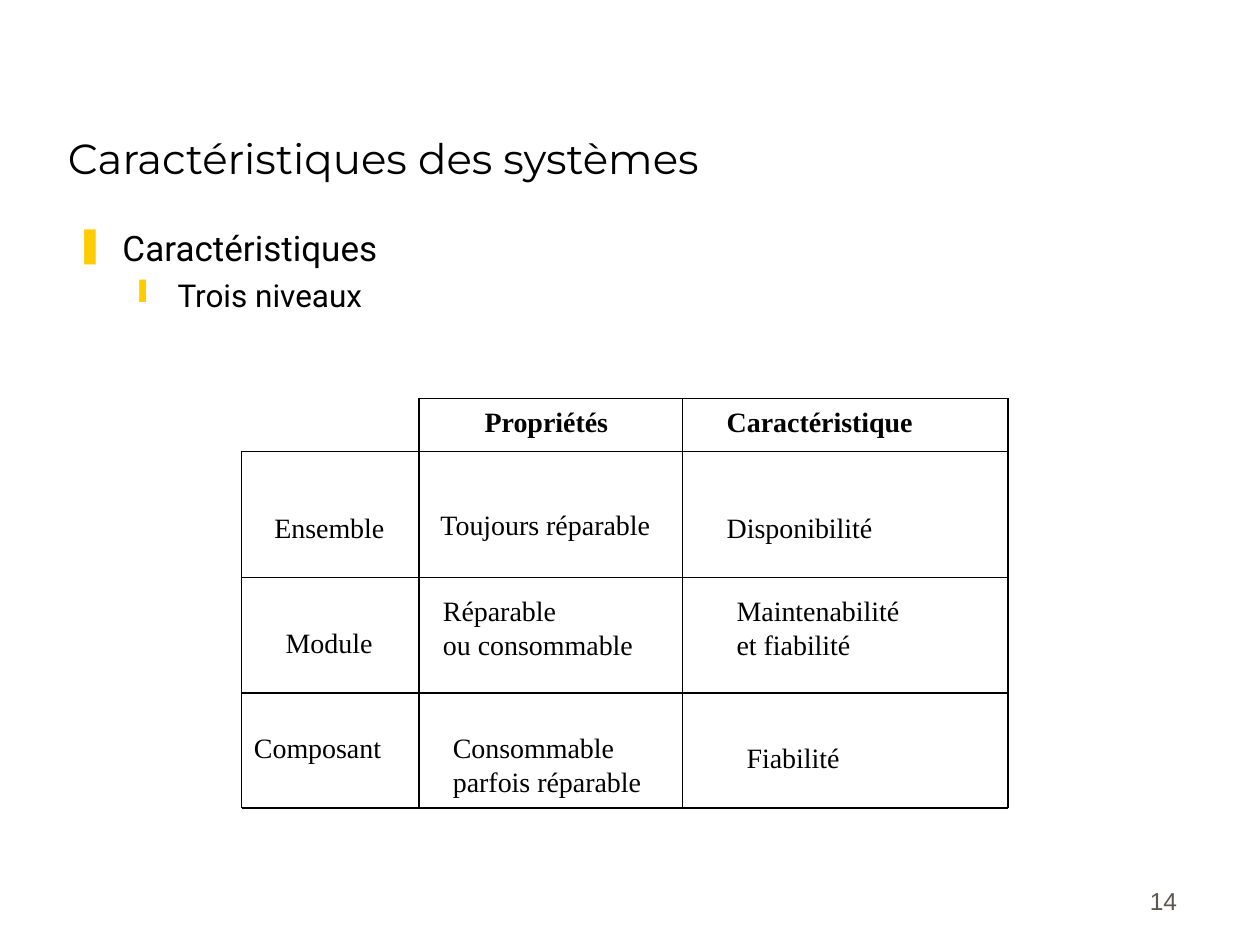
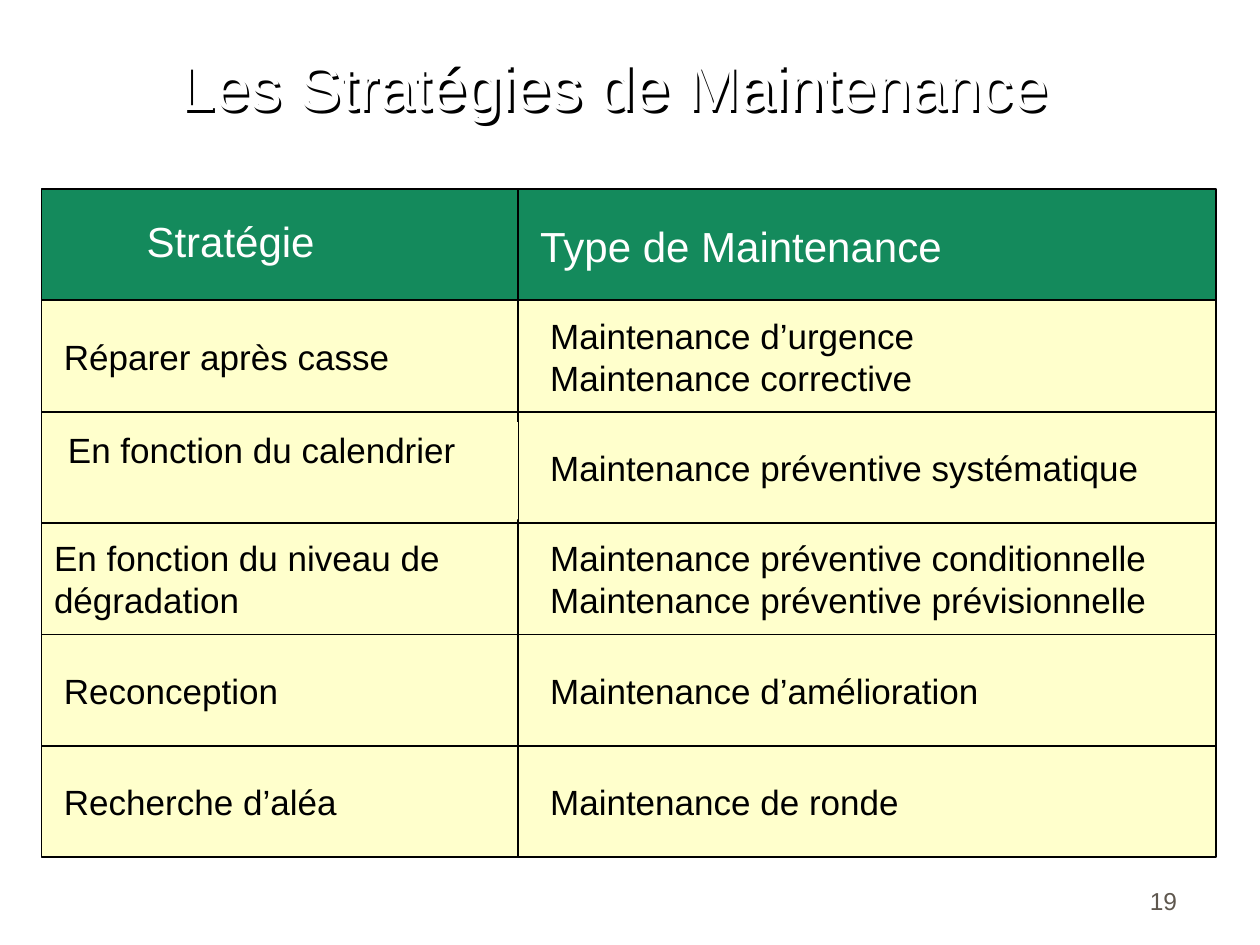
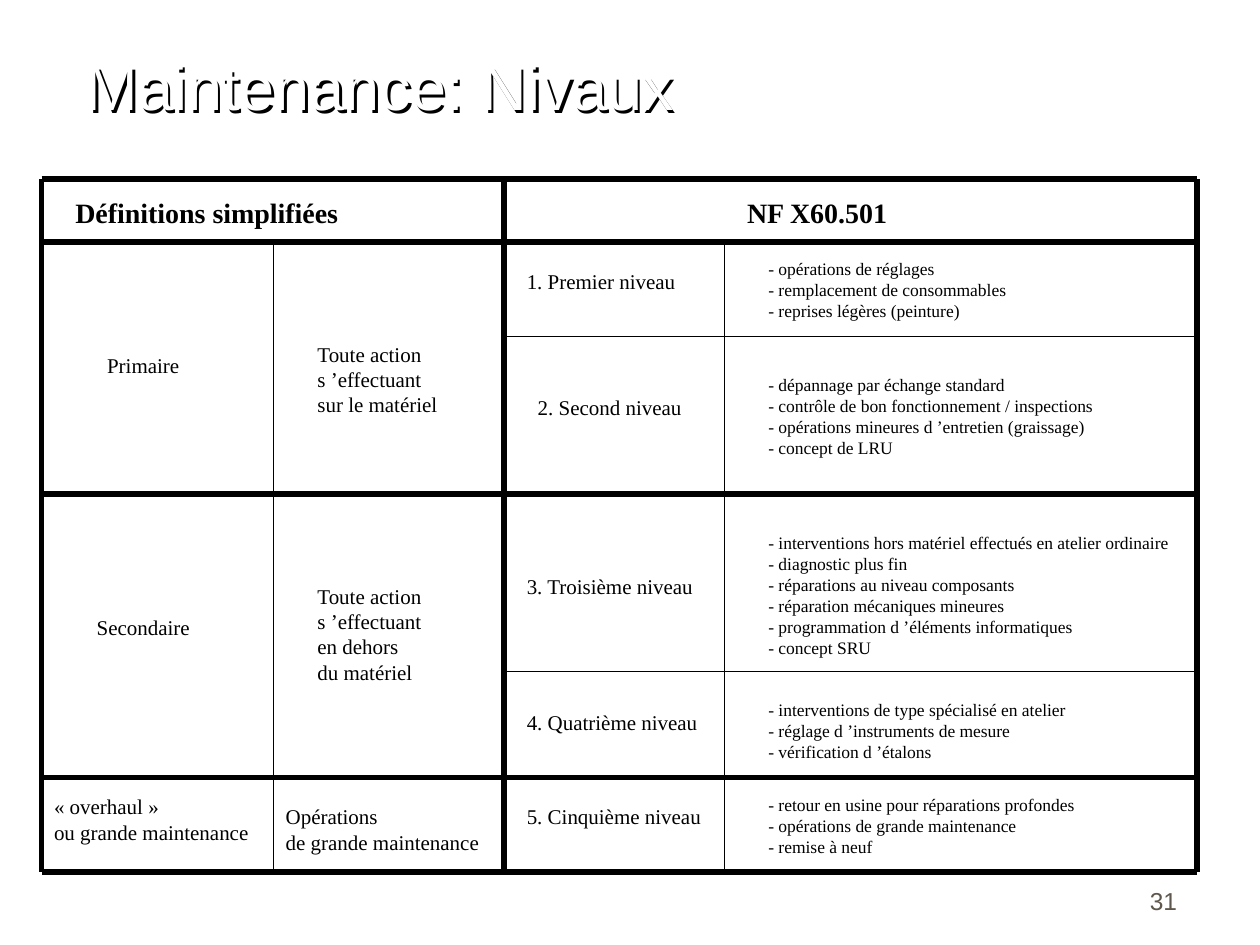
import dataclasses

import lxml.etree
import pptx
import pptx.dml.color
import pptx.enum.shapes
import pptx.enum.text
import pptx.oxml.ns
import pptx.util

Cm = pptx.util.Cm
Pt = pptx.util.Pt
ALIGN = pptx.enum.text.PP_ALIGN
ANCHOR = pptx.enum.text.MSO_ANCHOR


@dataclasses.dataclass(frozen=True)
class Theme:
    """Colours, fonts and type sizes of the deck."""
    ink: str = "000000"
    white: str = "FFFFFF"
    green: str = "148A5C"
    cream: str = "FFFFCC"
    gold: str = "FFCC00"
    grey: str = "5E574E"
    sans: str = "Arial"
    serif: str = "Times New Roman"
    head: str = "Montserrat"
    body: str = "Roboto"
    banner: int = 36
    title: int = 24
    large: int = 20
    sub: int = 18
    mid: int = 16
    foot: int = 14
    small: int = 12
    tiny: int = 10
    thin: float = 0.75
    edge: float = 1
    thick: float = 3


@dataclasses.dataclass(frozen=True)
class Box:
    """A region in centimetres."""
    x: float
    y: float
    w: float
    h: float

    def inner(self, x, y, w, h):
        """Return a box placed relative to this one."""
        return Box(self.x + x, self.y + y, w, h)

    def place(self):
        """Return left, top, width and height as lengths."""
        return Cm(self.x), Cm(self.y), Cm(self.w), Cm(self.h)


T = Theme()


def paint(tone):
    """Return the colour for a hex code."""
    return pptx.dml.color.RGBColor.from_string(tone)


def add(parent, tag, **attrs):
    """Append a drawing element to its parent."""
    return lxml.etree.SubElement(parent, pptx.oxml.ns.qn(tag), **attrs)


def fill_text(shape, text, size, font, tone=T.ink, bold=False,
              align=ALIGN.LEFT, anchor=ANCHOR.TOP):
    """Write text in a shape and format its runs."""
    frame = shape.text_frame
    frame.word_wrap = True
    frame.vertical_anchor = anchor
    frame.text = text
    for para in frame.paragraphs:
        para.alignment = align
        for run in para.runs:
            run.font.size = Pt(size)
            run.font.name = font
            run.font.bold = bold
            run.font.color.rgb = paint(tone)


def label(slide, box, text, size, font, **style):
    """Add a text box."""
    shape = slide.shapes.add_textbox(*box.place())
    fill_text(shape, text, size, font, **style)
    return shape


def notes(slide, box, items, size, bold=False):
    """Add serif texts at offsets, each as tall as its lines."""
    for x, y, w, text in items:
        lines = text.count("\n") + 1
        tall = Pt(1.2 * size * lines).cm + 0.25
        label(slide, box.inner(x, y, w, tall), text, size, T.serif, bold=bold)


def rules(slide, box, ends, width):
    """Draw straight lines between offsets in the box."""
    for x1, y1, x2, y2 in ends:
        line = slide.shapes.add_connector(
            pptx.enum.shapes.MSO_CONNECTOR.STRAIGHT,
            Cm(box.x + x1), Cm(box.y + y1), Cm(box.x + x2), Cm(box.y + y2))
        line.line.color.rgb = paint(T.ink)
        line.line.width = Pt(width)
        add(line._element.spPr, "a:effectLst")


def cell(slide, box, tone, edge=True):
    """Add a filled rectangle."""
    shape = slide.shapes.add_shape(
        pptx.enum.shapes.MSO_SHAPE.RECTANGLE, *box.place())
    shape.shadow.inherit = False
    shape.fill.solid()
    shape.fill.fore_color.rgb = paint(tone)
    if edge:
        shape.line.color.rgb = paint(T.ink)
        shape.line.width = Pt(T.edge)
    else:
        shape.line.fill.background()
    return shape


def banner(slide, box, text):
    """Add a white title with a hard black shadow."""
    shape = label(slide, box, text, T.banner, T.sans, tone=T.white)
    effect = add(shape._element.spPr, "a:effectLst")
    shade = add(effect, "a:outerShdw", blurRad="0", dist=str(Pt(2)),
                dir="2700000", algn="tl", rotWithShape="0")
    add(shade, "a:srgbClr", val=T.ink)


def bullets(slide, box, items):
    """Add a bulleted list of (text, size, mark, margin, hang)."""
    shape = slide.shapes.add_textbox(*box.place())
    frame = shape.text_frame
    frame.word_wrap = True
    frame.text = "\n".join(item[0] for item in items)
    for level, (para, item) in enumerate(zip(frame.paragraphs, items)):
        size, mark, margin, hang = item[1:]
        para.level = level
        props = para._p.get_or_add_pPr()
        props.set("marL", str(Cm(margin)))
        props.set("indent", str(-Cm(hang)))
        add(add(props, "a:buClr"), "a:srgbClr", val=T.gold)
        add(props, "a:buChar", char=mark)
        if level:
            para.space_before = Pt(4)
        for run in para.runs:
            run.font.size = Pt(size)
            run.font.name = T.body
            run.font.color.rgb = paint(T.ink)


def new_slide(deck, number):
    """Add a blank slide with its page number."""
    slide = deck.slides.add_slide(deck.slide_layouts[6])
    label(slide, Box(18.69, 17.3, 5.29, 1.27), str(number), T.foot, T.sans,
          tone=T.grey, align=ALIGN.RIGHT, anchor=ANCHOR.BOTTOM)
    return slide


def traits(slide, box):
    """Draw the grid of system levels and their traits."""
    notes(slide, box, [
        (0.41, 2.13, 2.8, "Ensemble"),
        (0.64, 4.45, 2.4, "Module"),
        (0, 6.58, 3.2, "Composant"),
        (3.76, 2.08, 4.9, "Toujours réparable"),
        (3.81, 3.81, 4.5, "Réparable\nou consommable"),
        (4.01, 6.58, 4.5, "Consommable\nparfois réparable"),
        (9.53, 2.13, 3.6, "Disponibilité"),
        (9.73, 3.81, 3.9, "Maintenabilité\net fiabilité"),
        (9.93, 6.78, 2.5, "Fiabilité"),
    ], T.mid)
    notes(slide, box, [
        (4.65, 0, 3.2, "Propriétés"),
        (9.53, 0, 5.8, "Caractéristique"),
    ], T.mid, bold=True)
    left, top = 3.58, 1.07
    rows = [(0, y, box.w, y) for y in (top, 3.61, 5.94, box.h)]
    cols = [(x, 0, x, box.h) for x in (left, 8.89, box.w)]
    sides = [(left, 0, box.w, 0), (0, top, 0, box.h)]
    rules(slide, box, rows + cols + sides, T.thin)


def plans(slide, box):
    """Draw the two columns of strategies and upkeep types."""
    rows = [
        ("Réparer après casse",
         "Maintenance d’urgence\nMaintenance corrective"),
        ("", "Maintenance préventive systématique"),
        ("En fonction du niveau de dégradation",
         "Maintenance préventive conditionnelle\n"
         "Maintenance préventive prévisionnelle"),
        ("Reconception", "Maintenance d’amélioration"),
        ("Recherche d’aléa", "Maintenance de ronde"),
    ]
    split = 9.6
    tall = box.h / (len(rows) + 1)
    cols = [(0, split, 0.45), (split, box.w - split, 0.65)]
    for x, wide, _ in cols:
        cell(slide, box.inner(x, 0, wide, tall), T.green)
    label(slide, box.inner(1.85, 0.41, 3.92, 1.27), "Stratégie", T.title,
          T.sans, tone=T.white, align=ALIGN.CENTER, anchor=ANCHOR.MIDDLE)
    label(slide, box.inner(9.8, 0.51, 9.65, 1.27), "Type de Maintenance",
          T.title, T.sans, tone=T.white, anchor=ANCHOR.MIDDLE)
    for step, row in enumerate(rows, 1):
        for (x, wide, inset), text in zip(cols, row):
            shape = cell(slide, box.inner(x, step * tall, wide, tall), T.cream)
            if text:
                fill_text(shape, text, T.large, T.sans, anchor=ANCHOR.MIDDLE)
                long = text.startswith("En fonction")
                shape.text_frame.margin_left = Cm(0.25 if long else inset)
    patch = cell(slide, box.inner(0.28, 4.7, 9.32, 1.96), T.cream, edge=False)
    fill_text(patch, "En fonction du calendrier", T.large, T.sans)


def levels(slide, box):
    """Draw the grid of the five upkeep levels."""
    notes(slide, box, [
        (1.07, 3.38, 2.1, "Primaire"),
        (0.86, 8.66, 2.5, "Secondaire"),
        (0, 12.27, 4.6, "« overhaul »\nou grande maintenance"),
        (5.31, 3.15, 3.1, "Toute action\ns ’effectuant\nsur le matériel"),
        (5.31, 8.03, 2.8,
         "Toute action\ns ’effectuant\nen dehors\ndu matériel"),
        (4.67, 12.47, 4.6, "Opérations\nde grande maintenance"),
        (9.53, 1.68, 3.7, "1. Premier niveau"),
        (9.75, 4.22, 3.9, "2. Second niveau"),
        (9.53, 7.82, 4.1, "3. Troisième niveau"),
        (9.53, 10.57, 4.3, "4. Quatrième niveau"),
        (9.53, 12.47, 4.3, "5. Cinquième niveau"),
    ], T.small)
    tasks = [
        (1.47, 5.4, "- opérations de réglages\n"
         "- remplacement de consommables\n"
         "- reprises légères (peinture)"),
        (3.81, 7.2, "- dépannage par échange standard\n"
         "- contrôle de bon fonctionnement / inspections\n"
         "- opérations mineures d ’entretien (graissage)\n"
         "- concept de LRU"),
        (6.99, 8.8, "- interventions hors matériel effectués en atelier"
         " ordinaire\n"
         "- diagnostic plus fin\n"
         "- réparations au niveau composants\n"
         "- réparation mécaniques mineures\n"
         "- programmation d ’éléments informatiques\n"
         "- concept SRU"),
        (10.36, 6.7, "- interventions de type spécialisé en atelier\n"
         "- réglage d ’instruments de mesure\n"
         "- vérification d ’étalons"),
        (12.27, 6.8, "- retour en usine pour réparations profondes\n"
         "- opérations de grande maintenance\n"
         "- remise à neuf"),
    ]
    notes(slide, box, [(14.4, *task) for task in tasks], T.tiny)
    notes(slide, box, [
        (0.43, 0.2, 5.9, "Définitions simplifiées"),
        (13.97, 0.2, 3.5, "NF X60.501"),
    ], T.mid, bold=True)
    top, split = 1.27, 9.32
    fine = [(x, top, x, box.h) for x in (4.67, 13.77)]
    fine += [(split, y, box.w, y) for y in (3.18, 9.93)]
    rules(slide, box, fine, T.thin)
    bold = [(0, y, box.w, y) for y in (0, top, 6.35, 12.07, box.h)]
    bold += [(x, 0, x, box.h) for x in (0, split, box.w)]
    rules(slide, box, bold, T.thick)


def main():
    """Build and save the deck."""
    deck = pptx.Presentation()
    deck.slide_width = Cm(25.4)
    deck.slide_height = Cm(19.05)

    slide = new_slide(deck, 14)
    label(slide, Box(1.12, 0.64, 21.59, 3.18), "Caractéristiques des systèmes",
          T.title, T.head, anchor=ANCHOR.BOTTOM)
    bullets(slide, Box(1.27, 4.45, 22.7, 14.6), [
        ("Caractéristiques", T.large, "❚", 0.95, 0.95),
        ("Trois niveaux", T.sub, "❙", 2.06, 0.79),
    ])
    traits(slide, Box(4.87, 8.03, 15.45, 8.26))

    slide = new_slide(deck, 19)
    plans(slide, Box(0.84, 3.81, 23.67, 13.47))
    banner(slide, Box(3.38, 0.84, 18.01, 1.78),
           "Les Stratégies de Maintenance")

    slide = new_slide(deck, 31)
    banner(slide, Box(1.48, 0.84, 12.37, 1.78), "Maintenance: Nivaux")
    levels(slide, Box(0.84, 3.61, 23.29, 13.97))

    deck.save("out.pptx")


if __name__ == "__main__":
    main()
